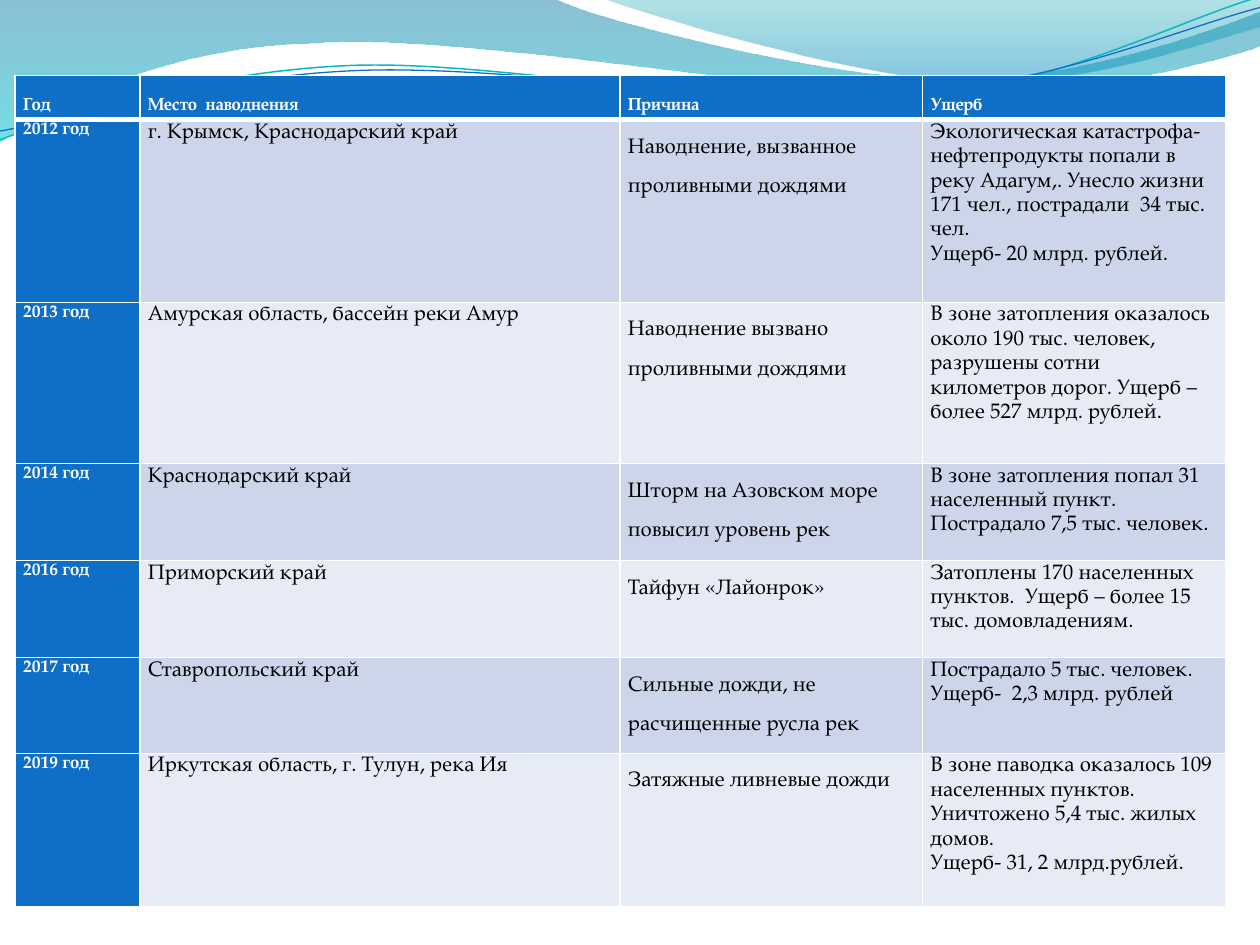
from math import cos, radians, sin

from lxml.etree import SubElement as add_child
from pptx import Presentation
from pptx.dml.color import RGBColor
from pptx.oxml.ns import qn
from pptx.util import Inches, Pt

COLUMNS, ROWS = 1000, 750
CELL = Inches(0.01)
FONT = "TeX Gyre Pagella"
BLUE, WHITE, BLACK = "0F6FC6", "FFFFFF", "000000"
BANDS = ("CCD5EA", "E7EBF5")
LABEL = {"size": Pt(10), "bold": True, "name": FONT}
BODY = {"size": Pt(12), "bold": False, "name": FONT}
MARGINS = {"margin_left": Pt(4.6), "margin_right": Pt(4.6), "margin_top": 0, "margin_bottom": 0}
LOOSE, TIGHT = Pt(22.5), 1.15

TABLE_PLACE = (12, 60, 961, 660)
COLUMN_WIDTHS = (99, 381, 240, 241)
ROW_HEIGHTS = (35, 145, 128, 77, 77, 76, 122)
FLOODS = [
    ("Год", "Место  наводнения", "Причина", "Ущерб"),
    ("2012 год", "г. Крымск, Краснодарский край", "Наводнение, вызванное проливными дождями",
     "Экологическая катастрофа-нефтепродукты попали в реку Адагум,. Унесло жизни 171 чел., "
     "пострадали  34 тыс. чел.\nУщерб- 20 млрд. рублей."),
    ("2013 год", "Амурская область, бассейн реки Амур", "Наводнение вызвано проливными дождями",
     "В зоне затопления оказалось  около 190 тыс. человек, разрушены сотни километров дорог. "
     "Ущерб – более 527 млрд. рублей."),
    ("2014 год", "Краснодарский край", "Шторм на Азовском море  повысил уровень рек",
     "В зоне затопления попал 31 населенный пункт. Пострадало 7,5 тыс. человек."),
    ("2016 год", "Приморский край", "Тайфун «Лайонрок»",
     "Затоплены 170 населенных пунктов.  Ущерб – более 15 тыс. домовладениям."),
    ("2017 год", "Ставропольский край", "Сильные дожди, не расчищенные русла рек",
     "Пострадало 5 тыс. человек.\nУщерб-  2,3 млрд. рублей"),
    ("2019 год", "Иркутская область, г. Тулун, река Ия", "Затяжные ливневые дожди",
     "В зоне паводка оказалось 109 населенных пунктов. Уничтожено 5,4 тыс. жилых домов.\n"
     "Ущерб- 31, 2 млрд.рублей."),
]

WIDE_WAVE = [
    (0, 0), (440, -1), (476, 17, 664, 63, 758, 63), (853, 63, 958, 26, 1000, 9), (1001, 36),
    (983, 44, 870, 76, 746, 75), (622, 75, 382, 28, 257, 34), (129, 36, 46, 83, -1, 113), (0, 0),
]
RIGHT_WAVE = [
    (479, -1), (509, 11, 682, 62, 769, 65), (856, 69, 961, 32, 1000, 21), (1000, 0), (479, -1),
]
TEAL_LINE = [
    (0, 111), (48, 93, 158, 57, 277, 52), (395, 47, 593, 89, 713, 80), (833, 71, 938, 15, 998, -2),
]
BLUE_LINE = [
    (0, 104), (47, 96, 164, 61, 283, 56), (403, 51, 597, 84, 717, 75), (836, 67, 941, 21, 1000, 6),
]
LINE_TILT = -2.7


def color(value):
    return RGBColor.from_string(value)


def apply(target, values):
    for attribute, value in values.items():
        setattr(target, attribute, value)


def pairs(step):
    return list(zip(step[::2], step[1::2]))


def turn(point, center, degrees):
    across, down = point[0] - center[0], point[1] - center[1]
    c, s = cos(radians(degrees)), sin(radians(degrees))
    return center[0] + across * c - down * s, center[1] + across * s + down * c


def bend(curve, steps):
    outline = next(curve._element.iter(qn("a:path")))
    corners = iter(outline.findall(qn("a:lnTo")))
    for step in steps[1:]:
        anchors = [next(corners) for _ in pairs(step)]
        if len(anchors) == 3:
            arc = outline.makeelement(qn("a:cubicBezTo"))
            anchors[0].addprevious(arc)
            for anchor in anchors:
                arc.append(anchor[0])
                outline.remove(anchor)


def add_curve(slide, steps, closed, center=(0, 0), tilt=0):
    points = [turn(point, center, -tilt) for step in steps for point in pairs(step)]
    start, *rest = [(round(x * CELL), round(y * CELL)) for x, y in points]
    builder = slide.shapes.build_freeform(*start)
    builder.add_line_segments(rest, close=closed)
    curve = builder.convert_to_shape()
    bend(curve, steps)
    curve.rotation = tilt
    curve.shadow.inherit = False
    return curve


def add_wave(slide, steps, stops):
    wave = add_curve(slide, steps, True)
    wave.line.fill.background()
    wave.fill.gradient()
    gradient = wave.fill._xPr.find(qn("a:gradFill"))
    for part in list(gradient):
        gradient.remove(part)
    stop_list = add_child(gradient, qn("a:gsLst"))
    for position, shade, opacity in stops:
        stop = add_child(stop_list, qn("a:gs"), pos=str(position * 1000))
        tint = add_child(stop, qn("a:srgbClr"), val=shade)
        add_child(tint, qn("a:alpha"), val=str(opacity * 1000))
    add_child(gradient, qn("a:lin"), ang="5400000", scaled="0")


def add_wave_line(slide, steps, center, shade, width):
    wave_line = add_curve(slide, steps, False, center, LINE_TILT)
    wave_line.fill.background()
    wave_line.line.color.rgb = color(shade)
    wave_line.line.width = Pt(width)


def add_borders(cell, widths):
    properties = cell._tc.get_or_add_tcPr()
    for side, width in widths.items():
        border = add_child(properties, qn(f"a:ln{side}"), w=str(Pt(width)))
        fill = add_child(border, qn("a:solidFill"))
        add_child(fill, qn("a:srgbClr"), val=WHITE)


def fill_cell(cell, content, row, column):
    is_label = row == 0 or column == 0
    add_borders(cell, {"L": 1, "R": 1, "T": 3 if row == 1 else 1, "B": 3 if row == 0 else 1})
    cell.fill.solid()
    cell.fill.fore_color.rgb = color(BLUE if is_label else BANDS[(row - 1) % 2])
    apply(cell, MARGINS)
    cell.text = content
    for paragraph in cell.text_frame.paragraphs:
        paragraph.line_spacing = LOOSE if row == 0 or column == 2 else TIGHT
        for run in paragraph.runs:
            apply(run.font, LABEL if is_label else BODY)
            run.font.color.rgb = color(WHITE if is_label else BLACK)


def add_flood_table(slide):
    place = [length * CELL for length in TABLE_PLACE]
    table = slide.shapes.add_table(len(FLOODS), len(COLUMN_WIDTHS), *place).table
    apply(table, {"first_col": True, "horz_banding": False})
    for column, width in zip(table.columns, COLUMN_WIDTHS):
        column.width = width * CELL
    for row, height in zip(table.rows, ROW_HEIGHTS):
        row.height = height * CELL
    for row, flood in enumerate(FLOODS):
        for column, content in enumerate(flood):
            fill_cell(table.cell(row, column), content, row, column)


def main():
    deck = Presentation()
    apply(deck, {"slide_width": COLUMNS * CELL, "slide_height": ROWS * CELL})
    slide = deck.slides.add_slide(deck.slide_layouts[6])
    add_wave(slide, WIDE_WAVE, [(0, "0074A1", 45), (100, "00C6CF", 55)])
    add_wave(slide, RIGHT_WAVE, [(0, "00A1A9", 30), (80, "008BBF", 45)])
    add_wave_line(slide, TEAL_LINE, (499, 57.5), "0AB8BF", 0.85)
    add_wave_line(slide, BLUE_LINE, (499.5, 59), BLUE, 0.75)
    add_flood_table(slide)
    deck.save("out.pptx")


if __name__ == "__main__":
    main()
